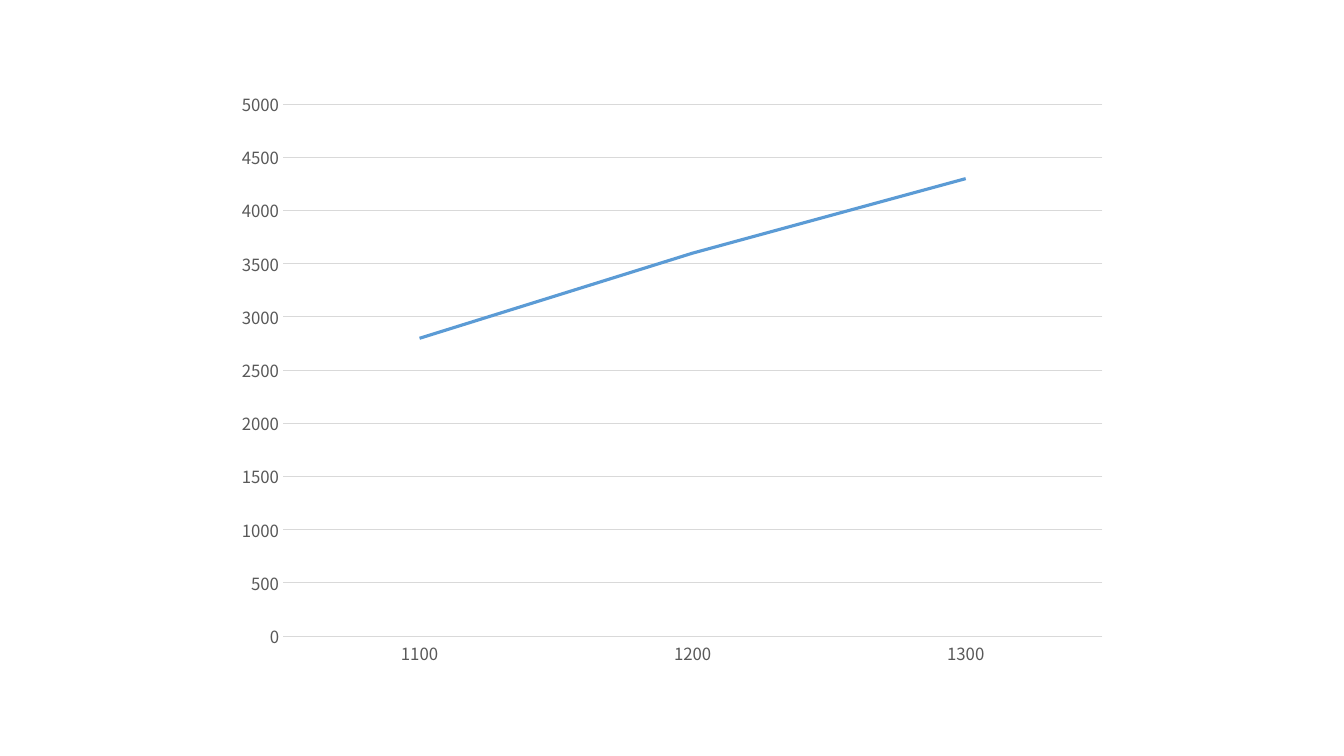
"""Build a slide with one line chart."""
from pptx import Presentation
from pptx import util as u
from pptx.chart import data as cd
from pptx.dml import color as col
from pptx.enum import chart as ch

FACE = "Noto Sans CJK SC"
GREY = "D9D9D9"


def rgb(code):
    """Return the colour for a hex string."""
    return col.RGBColor.from_string(code)


def style(font, size=12, color="595959"):
    """Set face, size and colour of a font."""
    font.name = FACE
    font.size = u.Pt(size)
    font.color.rgb = rgb(color)


def stroke(line, color=GREY, width=0.75):
    """Set colour and width of a line."""
    line.color.rgb = rgb(color)
    line.width = u.Pt(width)


def plain(axis):
    """Remove tick marks from an axis and format its labels."""
    axis.major_tick_mark = axis.minor_tick_mark = ch.XL_TICK_MARK.NONE
    style(axis.tick_labels.font)


def trend(slide, left, top, width, height):
    """Place the line chart in the given box."""
    data = cd.CategoryChartData()
    data.categories = ["1100", "1200", "1300"]
    data.add_series("Series 1", [2800, 3600, 4300])
    box = [u.Inches(n) for n in (left, top, width, height)]
    chart = slide.shapes.add_chart(ch.XL_CHART_TYPE.LINE, *box, data).chart
    chart.has_title = chart.has_legend = False
    style(chart.font, size=10, color="000000")

    base, scale = chart.category_axis, chart.value_axis
    plain(base)
    plain(scale)
    stroke(base.format.line)
    scale.format.line.fill.background()
    scale.minimum_scale, scale.maximum_scale = 0, 5000
    scale.major_unit = 500
    scale.has_major_gridlines = True
    stroke(scale.major_gridlines.format.line)

    plot = chart.plots[0]
    plot.vary_by_categories = False
    line = plot.series[0]
    line.smooth = False
    line.marker.style = ch.XL_MARKER_STYLE.NONE
    stroke(line.format.line, color="5B9BD5", width=2.25)


def main():
    """Create the deck and save it."""
    deck = Presentation()
    deck.slide_width, deck.slide_height = u.Inches(13.33), u.Inches(7.5)
    slide = deck.slides.add_slide(deck.slide_layouts[6])
    trend(slide, 2.22, 0.79, 8.89, 5.93)
    deck.save("out.pptx")


if __name__ == "__main__":
    main()
